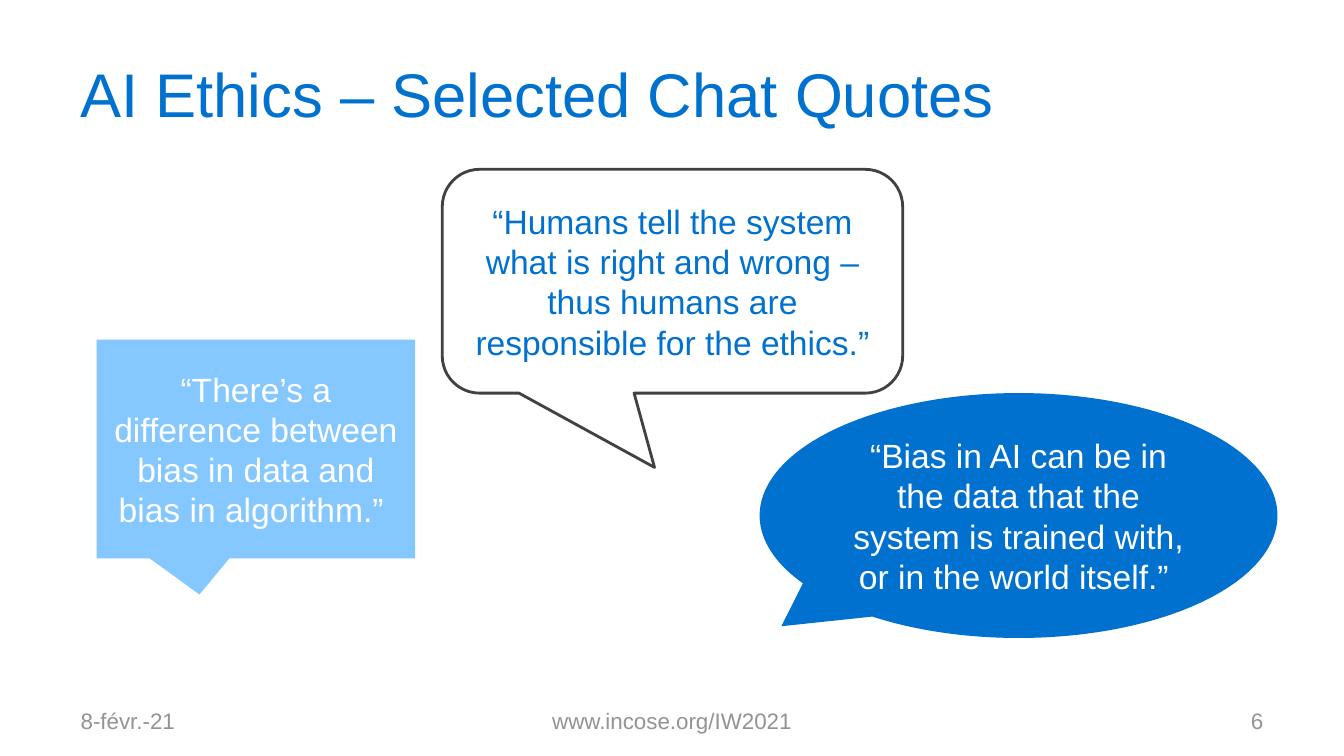
from dataclasses import dataclass

from pptx import Presentation
from pptx.dml.color import RGBColor
from pptx.enum.shapes import MSO_SHAPE
from pptx.enum.text import MSO_ANCHOR, PP_ALIGN
from pptx.util import Inches, Pt

LEFT, CENTER, RIGHT = PP_ALIGN.LEFT, PP_ALIGN.CENTER, PP_ALIGN.RIGHT
MIDDLE = MSO_ANCHOR.MIDDLE
RECTANGLE = MSO_SHAPE.RECTANGULAR_CALLOUT
ELLIPSE = MSO_SHAPE.OVAL_CALLOUT
ROUNDED = MSO_SHAPE.ROUNDED_RECTANGULAR_CALLOUT


@dataclass(frozen=True)
class Theme:
    font: str = "Arial"
    blue: str = "0071CE"
    light_blue: str = "85C8FF"
    white: str = "FFFFFF"
    outline: str = "414042"
    grey: str = "939393"
    title_size: int = 44
    quote_size: int = 24
    footer_size: int = 16
    outline_width: int = 2


theme = Theme()


def write(shape, text, size, color, align, side=0.1, edge=0.05):
    """Fill a shape with one middle-anchored paragraph; side and edge are insets in inches."""
    frame = shape.text_frame
    frame.word_wrap = True
    frame.vertical_anchor = MIDDLE
    frame.margin_left = frame.margin_right = Inches(side)
    frame.margin_top = frame.margin_bottom = Inches(edge)
    para = frame.paragraphs[0]
    para.alignment = align
    span = para.add_run()
    span.text = text
    span.font.name = theme.font
    span.font.size = Pt(size)
    span.font.color.rgb = RGBColor.from_string(color)


deck = Presentation()
deck.slide_width, deck.slide_height = Inches(13.34), Inches(7.5)
page = deck.slides.add_slide(deck.slide_layouts[6])

# Title and footer
labels = [
    ((0.67, 0.3, 12.01, 1.25), "AI Ethics – Selected Chat Quotes",
     theme.title_size, theme.blue, LEFT),
    ((0.67, 6.95, 3.11, 0.4), "8-févr.-21", theme.footer_size, theme.grey, LEFT),
    ((4.56, 6.95, 4.22, 0.4), "www.incose.org/IW2021",
     theme.footer_size, theme.grey, CENTER),
    ((9.56, 6.95, 3.11, 0.4), "6", theme.footer_size, theme.grey, RIGHT),
]
for place, text, size, color, align in labels:
    box = page.shapes.add_textbox(*map(Inches, place))
    write(box, text, size, color, align, side=0.13, edge=0.07)

# Speech bubbles: kind, place, adjustments, fill, outline, text colour, quote
bubbles = [
    (RECTANGLE, (0.96, 3.37, 3.16, 2.17), (-0.177, 0.665),
     theme.light_blue, None, theme.white,
     "“There’s a difference between bias in data and bias in algorithm.” "),
    (ELLIPSE, (7.54, 3.9, 5.14, 2.43), (-0.458, 0.452),
     theme.blue, None, theme.white,
     "“Bias in AI can be in the data that the system is trained with, "
     "or in the world itself.” "),
    (ROUNDED, (4.39, 1.68, 4.57, 2.22), (-0.039, 0.832, 0.167),
     theme.white, theme.outline, theme.blue,
     "“Humans tell the system what is right and wrong – "
     "thus humans are responsible for the ethics.”"),
]
for kind, place, adjustments, fill, outline, color, quote in bubbles:
    bubble = page.shapes.add_shape(kind, *map(Inches, place))
    bubble.shadow.inherit = False
    for index, value in enumerate(adjustments):
        bubble.adjustments[index] = value
    bubble.fill.solid()
    bubble.fill.fore_color.rgb = RGBColor.from_string(fill)
    if outline:
        bubble.line.color.rgb = RGBColor.from_string(outline)
        bubble.line.width = Pt(theme.outline_width)
    else:
        bubble.line.fill.background()
    write(bubble, quote, theme.quote_size, color, CENTER)

deck.save("out.pptx")
